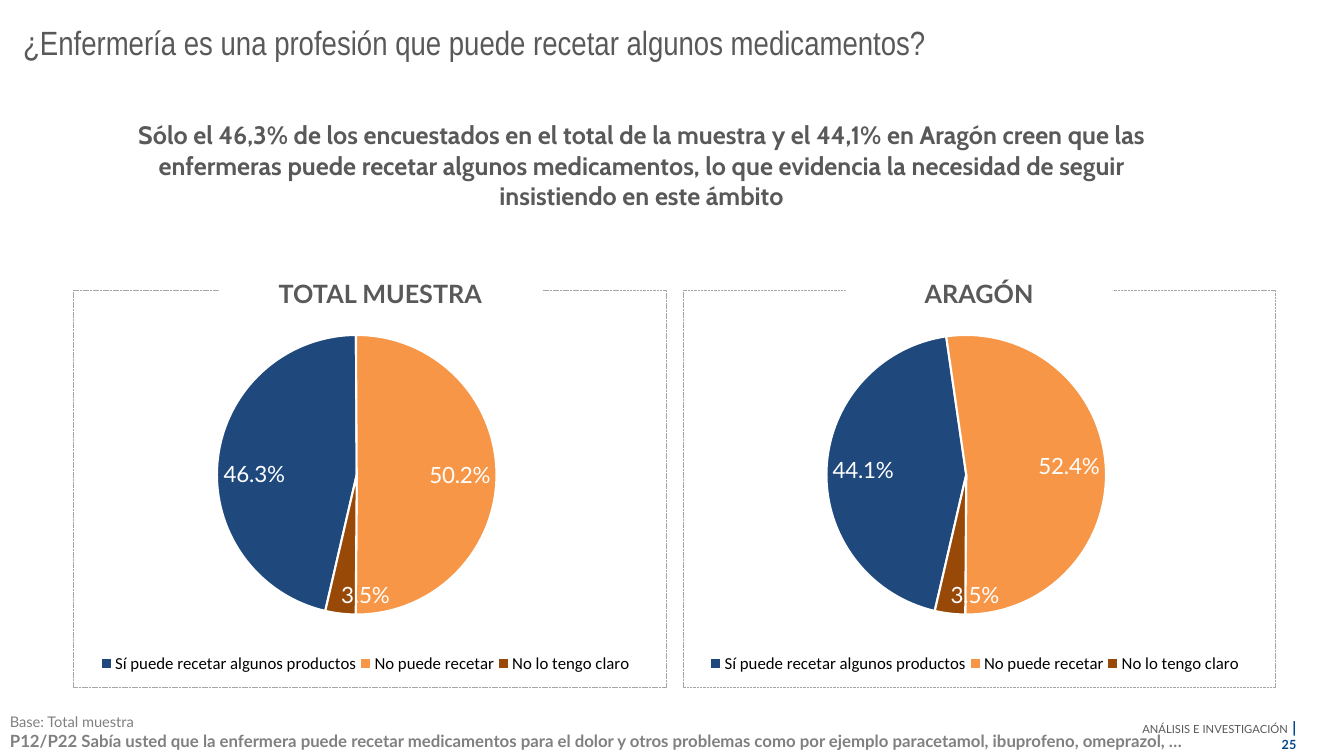
from pptx import Presentation
from pptx.chart.data import CategoryChartData
from pptx.dml.color import RGBColor
from pptx.enum.chart import XL_CHART_TYPE, XL_LABEL_POSITION, XL_LEGEND_POSITION
from pptx.enum.dml import MSO_LINE
from pptx.enum.shapes import MSO_SHAPE
from pptx.enum.text import MSO_ANCHOR, MSO_AUTO_SIZE, PP_ALIGN
from pptx.oxml import parse_xml
from pptx.oxml.ns import nsdecls, qn
from pptx.util import Cm, Pt

PIE = XL_CHART_TYPE.PIE
IN_END = XL_LABEL_POSITION.INSIDE_END
BELOW = XL_LEGEND_POSITION.BOTTOM
DASH = MSO_LINE.SQUARE_DOT
RECT = MSO_SHAPE.RECTANGLE
TOP, MIDDLE, LOW = MSO_ANCHOR.TOP, MSO_ANCHOR.MIDDLE, MSO_ANCHOR.BOTTOM
LEFT, CENTER, RIGHT = PP_ALIGN.LEFT, PP_ALIGN.CENTER, PP_ALIGN.RIGHT
NO_FIT = MSO_AUTO_SIZE.NONE

GREY, WHITE = "595959", "FFFFFF"
ANSWERS = {
    "Sí puede recetar algunos productos": "1F497D",
    "No puede recetar": "F79646",
    "No lo tengo claro": "984807",
}
PANELS = [
    ("TOTAL MUESTRA", 5.51, 8.15, (46.3, 50.2, 3.5)),
    ("ARAGÓN", 21.31, 6.73, (44.1, 52.4, 3.5)),
]


def color(code):
    return RGBColor.from_string(code)


def place(*sizes):
    return [Cm(size) for size in sizes]


def style(font, size, face, code, bold=False):
    font.size, font.name, font.bold = Pt(size), face, bold
    font.color.rgb = color(code)


def write(para, text, size=18, face="Lato", code=GREY, bold=False, align=LEFT):
    para.alignment = align
    run = para.add_run()
    run.text = text
    style(run.font, size, face, code, bold)


def setup(shape, anchor):
    frame = shape.text_frame
    frame.word_wrap = True
    frame.auto_size = NO_FIT
    frame.vertical_anchor = anchor
    return frame


def add_title(slide, text):
    title = slide.shapes.title
    title.left, title.top, title.width, title.height = place(0.33, 0.43, 29.01, 1.27)
    write(setup(title, TOP).paragraphs[0], text, size=24, face="Arial Narrow")


def add_rect(slide, box, fill=None, line=None):
    rect = slide.shapes.add_shape(RECT, *place(*box))
    rect.shadow.inherit = False
    if fill:
        rect.fill.solid()
        rect.fill.fore_color.rgb = color(fill)
    else:
        rect.fill.background()
    if line:
        rect.line.color.rgb = color(line)
        rect.line.width = Pt(0.25)
        rect.line.dash_style = DASH
    else:
        rect.line.fill.background()
    return rect


def add_label(slide, box, text, face="Lato"):
    para = setup(add_rect(slide, box, fill=WHITE), MIDDLE).paragraphs[0]
    para.space_after = Pt(6)
    write(para, text, face=face, bold=True, align=CENTER)


def layout(x, y, w, h, inner=False):
    target = '<c:layoutTarget val="inner"/>' if inner else ""
    return parse_xml(
        f'<c:layout {nsdecls("c")}><c:manualLayout>{target}'
        '<c:xMode val="edge"/><c:yMode val="edge"/>'
        f'<c:x val="{x}"/><c:y val="{y}"/><c:w val="{w}"/><c:h val="{h}"/>'
        "</c:manualLayout></c:layout>"
    )


def add_pie(slide, box, values):
    data = CategoryChartData()
    data.categories = list(ANSWERS)
    data.add_series("Series 1", values)
    chart = slide.shapes.add_chart(PIE, *place(*box), data).chart
    chart.has_title = False
    style(chart.font, 10, "Calibri", "000000")
    plot = chart.plots[0]
    plot.vary_by_categories = True
    for spot, code in enumerate(ANSWERS.values()):
        slice_ = plot.series[0].points[spot].format
        slice_.fill.solid()
        slice_.fill.fore_color.rgb = color(code)
        slice_.line.color.rgb = color(WHITE)
        slice_.line.width = Pt(1.5)

    plot.has_data_labels = True
    labels = plot.data_labels
    labels.show_value = True
    labels.show_percentage = False
    labels.number_format = "0.0\\%"
    labels.number_format_is_linked = False
    labels.position = IN_END
    style(labels.font, 16, "Lato", WHITE)

    chart.has_legend = True
    legend = chart.legend
    legend.position = BELOW
    legend.include_in_layout = False
    style(legend.font, 12, "Calibri", "000000")
    key = legend._element
    for old in key.findall(qn("c:layout")):
        key.remove(old)
    key.find(qn("c:legendPos")).addnext(layout(0.02, 0.82, 0.94, 0.08))

    pie = plot._element
    for old in pie.findall(qn("c:firstSliceAng")):
        pie.remove(old)
    pie.append(parse_xml(f'<c:firstSliceAng {nsdecls("c")} val="193"/>'))
    area = pie.getparent()
    for old in area.findall(qn("c:layout")):
        area.remove(old)
    area.insert(0, layout(0.23, 0.09, 0.49, 0.66, inner=True))


def add_panel(slide, spot, name, left, width, values):
    shift = spot * 15.36
    add_rect(slide, (1.85 + shift, 7.32, 14.94, 10.01), line="A6A6A6")
    add_label(slide, (left, 6.73, width, 1.35), name)
    add_pie(slide, (2.16 + shift, 7.42, 14.38, 10.82), values)


def add_notes(slide):
    box = slide.shapes.add_textbox(*place(0, 17.88, 32.74, 1.17))
    frame = setup(box, LOW)
    write(frame.paragraphs[0], "Base: Total muestra", size=10.5, code="808080")
    write(
        frame.add_paragraph(),
        "P12/P22 Sabía usted que la enfermera puede recetar medicamentos para el dolor "
        "y otros problemas como por ejemplo paracetamol, ibuprofeno, omeprazol, …",
        size=12, code="808080", bold=True,
    )


def add_footer(slide):
    box = slide.shapes.add_textbox(*place(28.07, 18.16, 4.85, 0.74))
    para = setup(box, MIDDLE).paragraphs[0]
    write(para, "ANÁLISIS E INVESTIGACIÓN", size=8, align=RIGHT)
    write(para, " ", size=11, align=RIGHT)
    write(para, "|", size=11, code="00478F", bold=True, align=RIGHT)
    para.add_line_break()
    write(para, "25", size=9, code="00478F", bold=True, align=RIGHT)


def main():
    deck = Presentation()
    deck.slide_width, deck.slide_height = place(33.87, 19.05)
    slide = deck.slides.add_slide(deck.slide_layouts[5])
    add_footer(slide)
    add_title(slide, "¿Enfermería es una profesión que puede recetar algunos medicamentos?")
    add_notes(slide)
    add_label(
        slide, (3.05, 2.79, 26.24, 2.74),
        "Sólo el 46,3% de los encuestados en el total de la muestra y el 44,1% en Aragón "
        "creen que las enfermeras puede recetar algunos medicamentos, lo que evidencia "
        "la necesidad de seguir insistiendo en este ámbito",
        face="Cabin",
    )
    for spot, panel in enumerate(PANELS):
        add_panel(slide, spot, *panel)
    deck.save("out.pptx")


if __name__ == "__main__":
    main()
